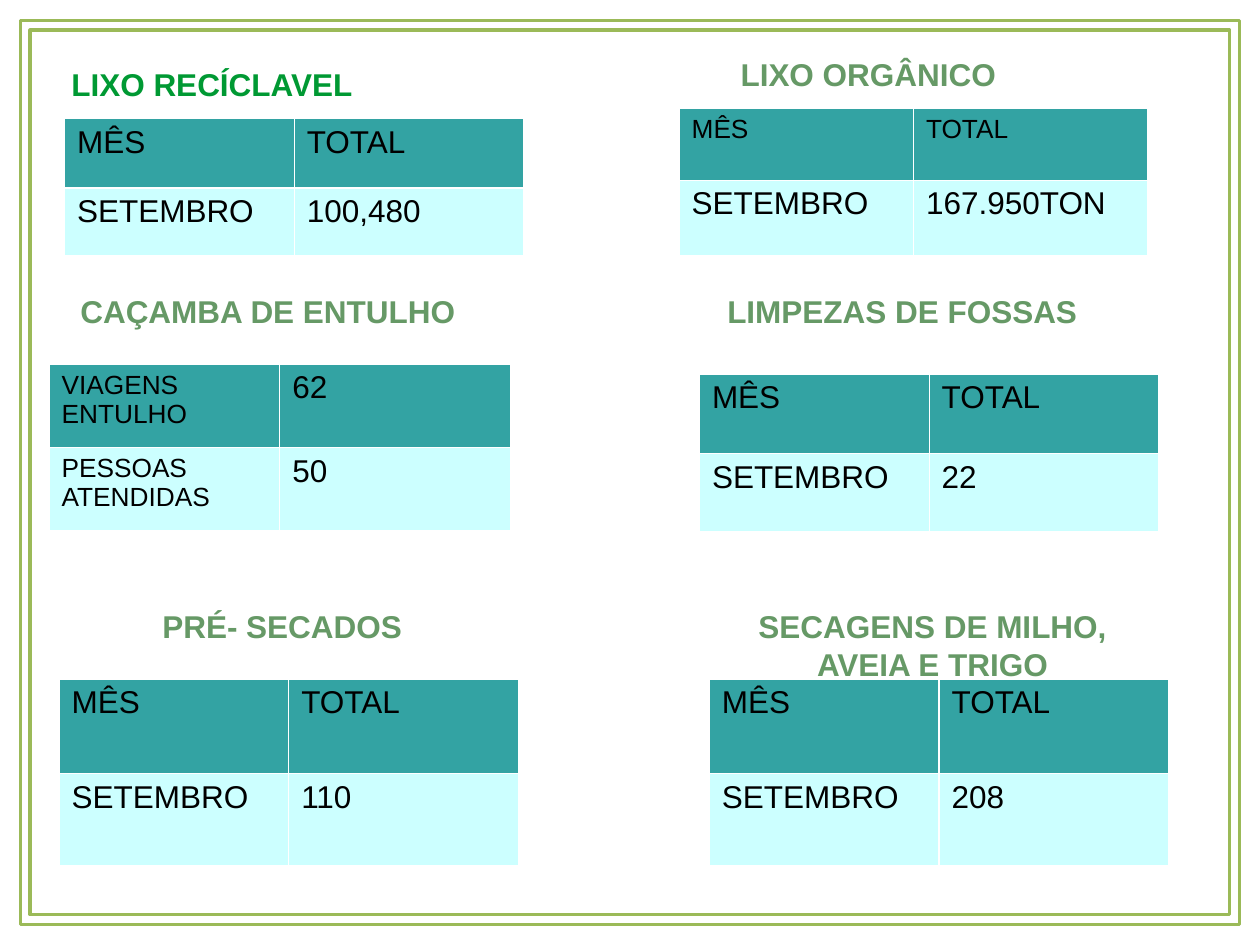
from lxml.etree import SubElement
from pptx import Presentation
from pptx.dml.color import RGBColor
from pptx.enum.text import PP_ALIGN as Align
from pptx.oxml.ns import qn
from pptx.util import Cm, Pt

GREEN, SAGE, TEAL, AQUA = "009933", "669966", "33A3A3", "CCFFFF"
BLACK, WHITE, LIME = "000000", "FFFFFF", "9BBA58"
LEFT, CENTER = Align.LEFT, Align.CENTER


def month_rows(total, header_size=18):
    return [[("MÊS", header_size), ("TOTAL", header_size)],
            [("SETEMBRO", 18), (total, 18)]]


sections = [
    dict(heading="LIXO RECÍCLAVEL", heading_at=(1.19, 1.19, 7.19), color=GREEN, align=LEFT,
         table_at=(1.3, 2.39, 9.26), heights=(1.4, 1.36), rows=month_rows("100,480")),
    dict(heading="LIXO ORGÂNICO", heading_at=(14.68, 0.99, 9.78), color=SAGE, align=LEFT,
         table_at=(13.69, 2.18, 9.45), heights=(1.45, 1.52), rows=month_rows("167.950TON", 15)),
    dict(heading="CAÇAMBA DE ENTULHO", heading_at=(-1.19, 5.77, 13.18), color=SAGE, align=CENTER,
         table_at=(0.99, 7.34, 9.3), heights=(1.68, 1.68),
         rows=[[("VIAGENS ENTULHO", 15), ("62", 18)],
               [("PESSOAS ATENDIDAS", 15), ("50", 18)]]),
    dict(heading="LIMPEZAS DE FOSSAS", heading_at=(13.49, 5.77, 9.4), color=SAGE, align=CENTER,
         table_at=(14.1, 7.54, 9.26), heights=(1.6, 1.57), rows=month_rows("22")),
    dict(heading="PRÉ- SECADOS", heading_at=(0.99, 12.12, 9.4), color=SAGE, align=CENTER,
         table_at=(1.19, 13.69, 9.26), heights=(1.9, 1.86), rows=month_rows("110")),
    dict(heading="SECAGENS DE MILHO, AVEIA E TRIGO", heading_at=(14.1, 12.12, 9.4), color=SAGE,
         align=CENTER, table_at=(14.3, 13.69, 9.26), heights=(1.9, 1.86), rows=month_rows("208")),
]
frame_insets = (0.41, 0.61)


def rgb(code):
    return RGBColor.from_string(code)


def write(frame, text, size=18, color=BLACK, bold=False, align=LEFT):
    frame.word_wrap = True
    paragraph = frame.paragraphs[0]
    paragraph.alignment = align
    run = paragraph.add_run()
    run.text = text
    run.font.name = "Arial"
    run.font.size = Pt(size)
    run.font.bold = bold
    run.font.color.rgb = rgb(color)


def add_borders(cell):
    properties = cell._tc.get_or_add_tcPr()
    for side in ("a:lnL", "a:lnR", "a:lnT", "a:lnB"):
        border = SubElement(properties, qn(side), w=str(Pt(0.75)))
        fill = SubElement(border, qn("a:solidFill"))
        SubElement(fill, qn("a:srgbClr"), val=WHITE)


def add_frame(slide, width, height):
    contours = []
    for inset in map(Cm, frame_insets):
        right, bottom = width - inset, height - inset
        contours.append([(inset, bottom), (right, bottom), (right, inset), (inset, inset)])
    outline = slide.shapes.build_freeform(*contours[0][0])
    for index, (start, *corners) in enumerate(contours):
        if index:
            outline.move_to(*start)
        outline.add_line_segments(corners, close=True)
    border = outline.convert_to_shape()
    border.shadow.inherit = False
    border.fill.background()
    border.line.color.rgb = rgb(LIME)
    border.line.width = Pt(2)


def add_section(slide, section):
    left, top, width = map(Cm, section["heading_at"])
    heading = slide.shapes.add_textbox(left, top, width, Cm(0.94))
    write(heading.text_frame, section["heading"], color=section["color"],
          bold=True, align=section["align"])

    left, top, width = map(Cm, section["table_at"])
    heights = [Cm(height) for height in section["heights"]]
    table = slide.shapes.add_table(2, 2, left, top, width, sum(heights)).table
    for r, (row, height, fill) in enumerate(zip(section["rows"], heights, (TEAL, AQUA))):
        table.rows[r].height = height
        for c, (text, size) in enumerate(row):
            cell = table.cell(r, c)
            add_borders(cell)
            cell.fill.solid()
            cell.fill.fore_color.rgb = rgb(fill)
            write(cell.text_frame, text, size=size)


def main():
    deck = Presentation()
    deck.slide_width, deck.slide_height = Cm(25.4), Cm(19.05)
    slide = deck.slides.add_slide(deck.slide_layouts[6])
    add_frame(slide, deck.slide_width, deck.slide_height)
    for section in sections:
        add_section(slide, section)
    deck.save("out.pptx")


if __name__ == "__main__":
    main()
